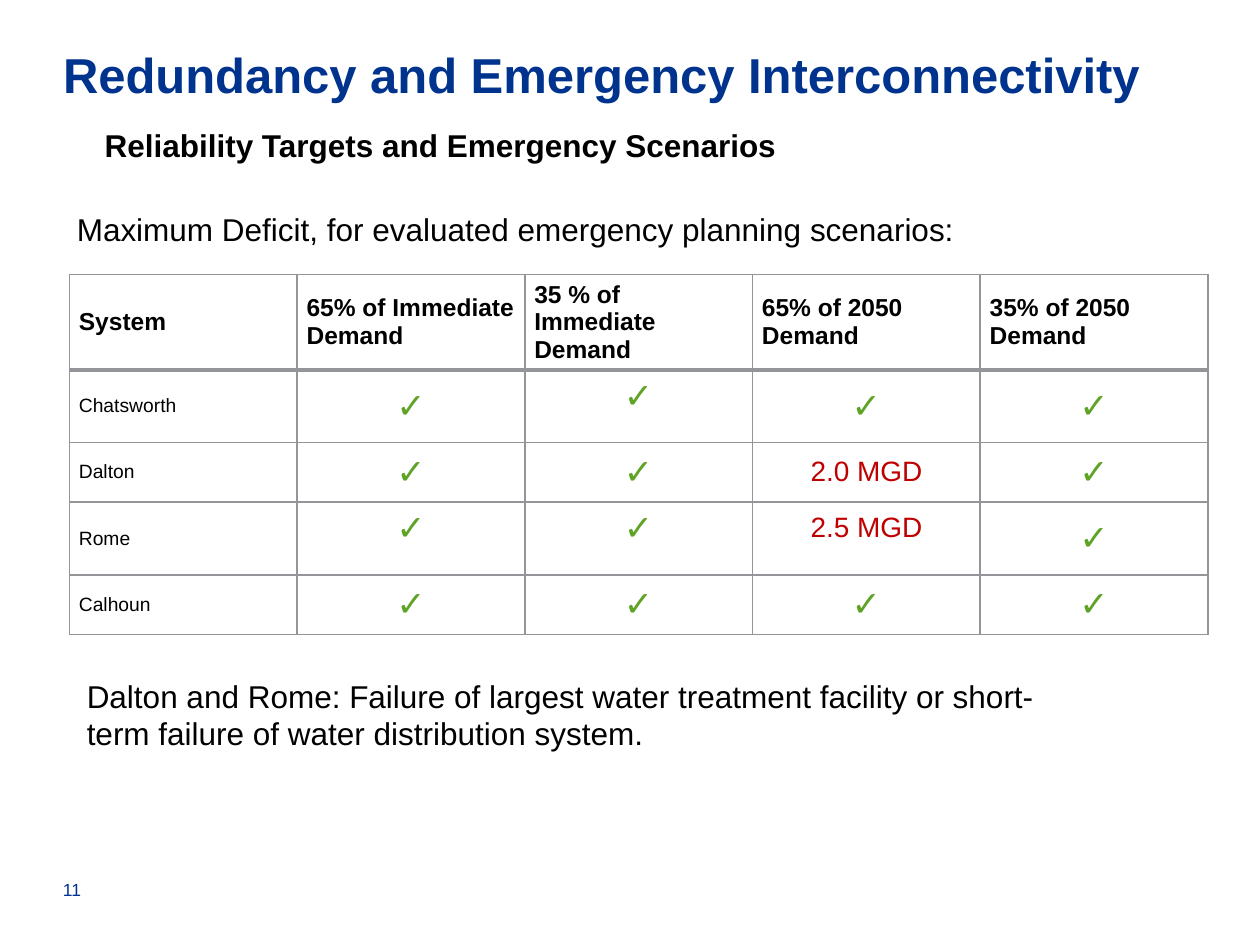
from dataclasses import dataclass

from lxml.etree import SubElement
from pptx import Presentation
from pptx.dml.color import RGBColor
from pptx.enum.text import MSO_ANCHOR, MSO_AUTO_SIZE, PP_ALIGN
from pptx.oxml.ns import qn
from pptx.util import Cm, Pt

NAVY, BLACK, GREEN, RED, GREY = "00338D", "000000", "5FA326", "C00000", "939598"
TICK = "✓"


@dataclass(frozen=True)
class Style:
    size: float
    color: str = BLACK
    bold: bool = False
    align: PP_ALIGN = PP_ALIGN.LEFT


@dataclass(frozen=True)
class Note:
    left: float
    top: float
    width: float
    height: float
    text: str
    style: Style
    inset: tuple[float, float] = (0, 0)
    anchor: MSO_ANCHOR = MSO_ANCHOR.TOP


@dataclass(frozen=True)
class Row:
    height: float
    texts: tuple[str, ...]
    raised: tuple[int, ...] = ()


HEADING = Style(14, bold=True)
SYSTEM = Style(11)
PASS = Style(20, GREEN, True, PP_ALIGN.CENTER)
DEFICIT = Style(16, RED, align=PP_ALIGN.CENTER)
BODY = Style(18)

TITLE = Note(1.27, 0.71, 22.86, 1.57, "Redundancy and Emergency Interconnectivity",
             Style(28, NAVY, True), anchor=MSO_ANCHOR.MIDDLE)
NOTES = (
    Note(2.11, 2.55, 16.41, 1.85, "Reliability Targets and Emergency Scenarios",
         Style(18, bold=True)),
    Note(1.27, 17.12, 2.21, 1.02, "11", Style(10, NAVY), anchor=MSO_ANCHOR.BOTTOM),
    Note(1.3, 4.11, 20.8, 1.02,
         "Maximum Deficit, for evaluated emergency planning scenarios:",
         BODY, (0.25, 0.13)),
    Note(1.5, 13.51, 20.8, 1.8,
         "Dalton and Rome: Failure of largest water treatment facility "
         "or short-term failure of water distribution system.",
         BODY, (0.25, 0.13)),
)
ROWS = (
    Row(1.93, ("System", "65% of Immediate Demand", "35 % of Immediate Demand",
               "65% of 2050 Demand", "35% of 2050 Demand")),
    Row(1.46, ("Chatsworth", TICK, TICK, TICK, TICK), raised=(2,)),
    Row(1.2, ("Dalton", TICK, TICK, "2.0 MGD", TICK)),
    Row(1.47, ("Rome", TICK, TICK, "2.5 MGD", TICK), raised=(1, 2, 3)),
    Row(1.2, ("Calhoun", TICK, TICK, TICK, TICK)),
)
TABLE_LEFT, TABLE_TOP, COLUMN_WIDTH = 1.4, 5.53, 4.59


def color(value: str) -> RGBColor:
    return RGBColor.from_string(value)


def write(frame, text: str, style: Style) -> None:
    para = frame.paragraphs[0]
    para.alignment = style.align
    para.space_before = Pt(0)
    span = para.add_run()
    span.text = text
    span.font.name = "Arial"
    span.font.size = Pt(style.size)
    span.font.bold = style.bold
    span.font.color.rgb = color(style.color)


def fill_box(box, note: Note) -> None:
    """Place, format and fill a text box or placeholder."""
    box.left, box.top = Cm(note.left), Cm(note.top)
    box.width, box.height = Cm(note.width), Cm(note.height)
    frame = box.text_frame
    frame.word_wrap = True
    frame.auto_size = MSO_AUTO_SIZE.NONE
    frame.vertical_anchor = note.anchor
    side, edge = note.inset
    frame.margin_left = frame.margin_right = Cm(side)
    frame.margin_top = frame.margin_bottom = Cm(edge)
    write(frame, note.text, note.style)


def add_borders(cell, widths: dict[str, float]) -> None:
    properties = cell._tc.get_or_add_tcPr()
    for position, (side, width) in enumerate(widths.items()):
        line = properties.makeelement(qn(f"a:{side}"), {"w": str(Pt(width))})
        properties.insert(position, line)
        SubElement(SubElement(line, qn("a:solidFill")), qn("a:srgbClr"), val=GREY)


def cell_style(row: int, column: int, text: str) -> Style:
    if row == 0:
        return HEADING
    if column == 0:
        return SYSTEM
    return PASS if text == TICK else DEFICIT


def add_deficit_table(page) -> None:
    columns = len(ROWS[0].texts)
    table = page.shapes.add_table(
        len(ROWS), columns, Cm(TABLE_LEFT), Cm(TABLE_TOP),
        Cm(COLUMN_WIDTH * columns), Cm(sum(row.height for row in ROWS))).table
    table.horz_banding = False
    for column in table.columns:
        column.width = Cm(COLUMN_WIDTH)
    for r, row in enumerate(ROWS):
        table.rows[r].height = Cm(row.height)
        for c, text in enumerate(row.texts):
            cell = table.cell(r, c)
            cell.fill.background()
            cell.vertical_anchor = MSO_ANCHOR.MIDDLE
            top, bottom = (0.03, 0.44) if c in row.raised else (0.13, 0.13)
            cell.margin_left = cell.margin_right = Cm(0.19)
            cell.margin_top, cell.margin_bottom = Cm(top), Cm(bottom)
            add_borders(cell, {"lnL": 1, "lnR": 1,
                               "lnT": 2.25 if r == 1 else 1,
                               "lnB": 2.25 if r == 0 else 1})
            write(cell.text_frame, text, cell_style(r, c, text))


def main() -> None:
    deck = Presentation()
    deck.slide_width, deck.slide_height = Cm(25.4), Cm(19.05)
    page = deck.slides.add_slide(deck.slide_layouts[5])
    fill_box(page.shapes.title, TITLE)
    add_deficit_table(page)
    for note in NOTES:
        fill_box(page.shapes.add_textbox(0, 0, 0, 0), note)
    deck.save("out.pptx")


if __name__ == "__main__":
    main()
